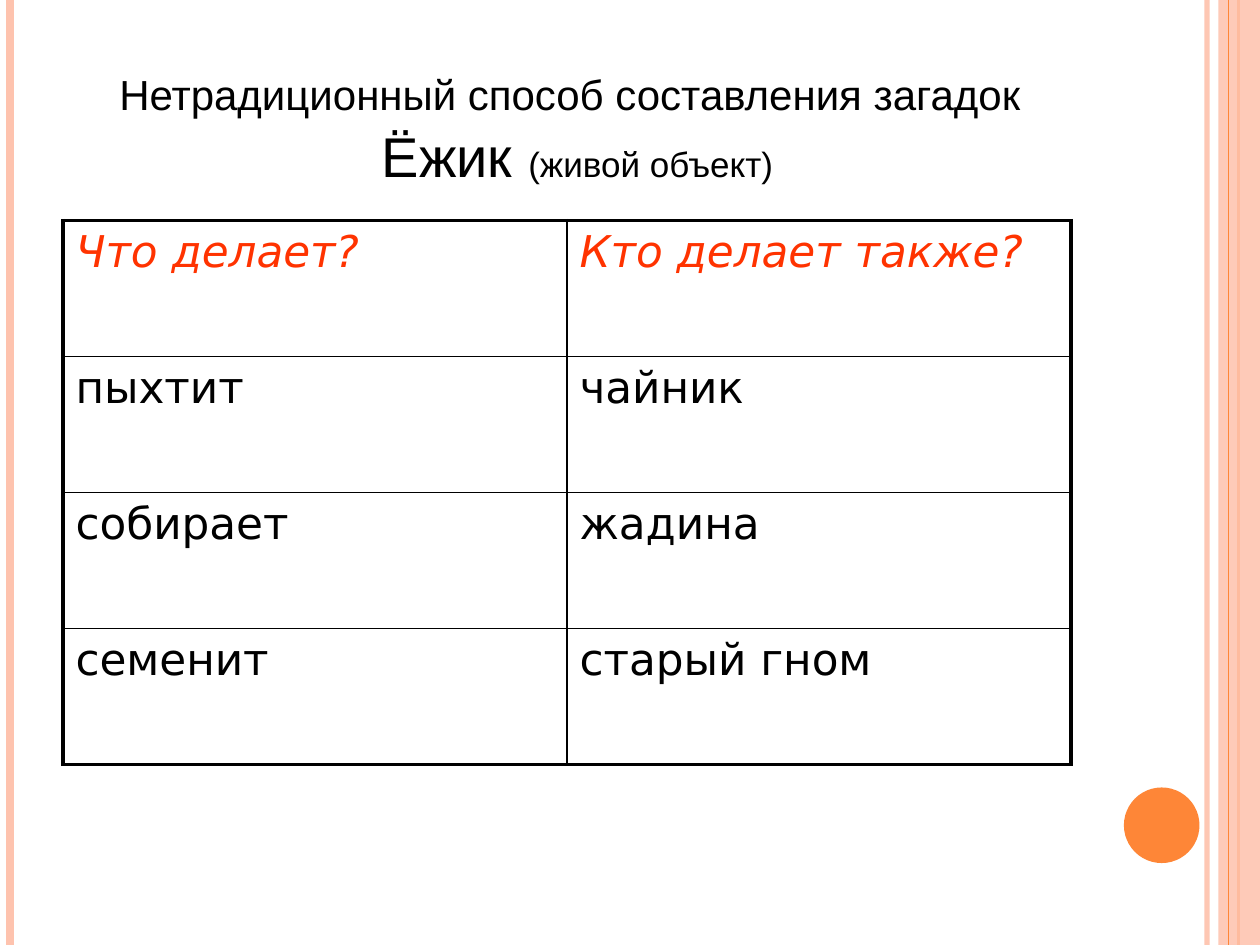
"""Slide with a riddle-making table about a hedgehog."""
from lxml import etree
from pptx import Presentation
from pptx.dml.color import RGBColor
from pptx.enum import shapes, text
from pptx.oxml import ns
from pptx.util import Inches, Pt

BLACK = RGBColor(0, 0, 0)
RED = RGBColor(0xFF, 0x33, 0x00)
PEACH = RGBColor(0xFE, 0xC3, 0xAE)
ORANGE = RGBColor(0xFE, 0x86, 0x37)

TITLE = [
    [("Нетрадиционный способ составления загадок", 24), (" ", 32)],
    [("Ёжик ", 32), ("(живой объект)", 20)],
]
ROWS = [
    ("Что делает?", "Кто делает также?"),
    ("пыхтит", "чайник"),
    ("собирает", "жадина"),
    ("семенит", "старый гном"),
]
COL_W, ROW_H = 4, 1.08
THICK, THIN = 2.25, 1


def set_alpha(fill, percent):
    clr = fill._xPr.find(".//" + ns.qn("a:srgbClr"))
    etree.SubElement(clr, ns.qn("a:alpha"), val=str(percent * 1000))


def add_stripe(s, x, color, width, alpha=100):
    line = s.shapes.add_connector(
        shapes.MSO_CONNECTOR.STRAIGHT, Inches(x), 0, Inches(x), Inches(7.5))
    line.line.color.rgb = color
    line.line.width = Pt(width)
    if alpha < 100:
        set_alpha(line.line.fill, alpha)
    etree.SubElement(line._element.spPr, ns.qn("a:effectLst"))


def add_filled(s, kind, box, color, alpha=100):
    sp = s.shapes.add_shape(kind, *map(Inches, box))
    sp.shadow.inherit = False
    sp.fill.solid()
    sp.fill.fore_color.rgb = color
    if alpha < 100:
        set_alpha(sp.fill, alpha)
    sp.line.fill.background()


def add_title(s):
    tf = s.shapes.add_textbox(*map(Inches, (0.5, 0.3, 8.17, 1.25))).text_frame
    tf.word_wrap = True
    tf.vertical_anchor = text.MSO_ANCHOR.BOTTOM
    p = tf.paragraphs[0]
    p.alignment = text.PP_ALIGN.CENTER
    p.font.name = "Arial"
    p.font.color.rgb = BLACK
    for i, runs in enumerate(TITLE):
        if i:
            p.add_line_break()
        for words, size in runs:
            r = p.add_run()
            r.text = words
            r.font.size = Pt(size)


def set_borders(cell, widths):
    tc_pr = cell._tc.get_or_add_tcPr()
    for i, (side, width) in enumerate(widths.items()):
        ln = etree.Element(ns.qn("a:ln" + side), w=str(Pt(width)))
        fill = etree.SubElement(ln, ns.qn("a:solidFill"))
        etree.SubElement(fill, ns.qn("a:srgbClr"), val=str(BLACK))
        tc_pr.insert(i, ln)


def add_table(s):
    n_rows, n_cols = len(ROWS), len(ROWS[0])
    table = s.shapes.add_table(
        n_rows, n_cols, Inches(0.5), Inches(1.75),
        Inches(COL_W * n_cols), Inches(ROW_H * n_rows)).table
    table.horz_banding = False
    for i, row in enumerate(ROWS):
        for j, words in enumerate(row):
            cell = table.cell(i, j)
            cell.text = words
            cell.fill.background()
            font = cell.text_frame.paragraphs[0].font
            font.name = "DejaVu Sans"
            font.size = Pt(25)
            font.bold = False
            font.italic = i == 0
            font.color.rgb = BLACK if i else RED
            outer = {"L": j == 0, "R": j == n_cols - 1,
                     "T": i == 0, "B": i == n_rows - 1}
            set_borders(cell, {k: THICK if v else THIN for k, v in outer.items()})


def main():
    prs = Presentation()
    prs.slide_width, prs.slide_height = Inches(10), Inches(7.5)
    s = prs.slides.add_slide(prs.slide_layouts[6])
    add_stripe(s, 9.58, PEACH, 3, 93)
    add_stripe(s, 0.08, PEACH, 4.5)
    add_stripe(s, 9.83, ORANGE, 1.5)
    add_filled(s, shapes.MSO_SHAPE.RECTANGLE, (9.67, 0, 0.33, 7.5), PEACH, 87)
    add_stripe(s, 9.75, ORANGE, 0.75)
    add_filled(s, shapes.MSO_SHAPE.OVAL, (8.92, 6.25, 0.6, 0.6), ORANGE)
    add_title(s)
    add_table(s)
    prs.save("out.pptx")


if __name__ == "__main__":
    main()
